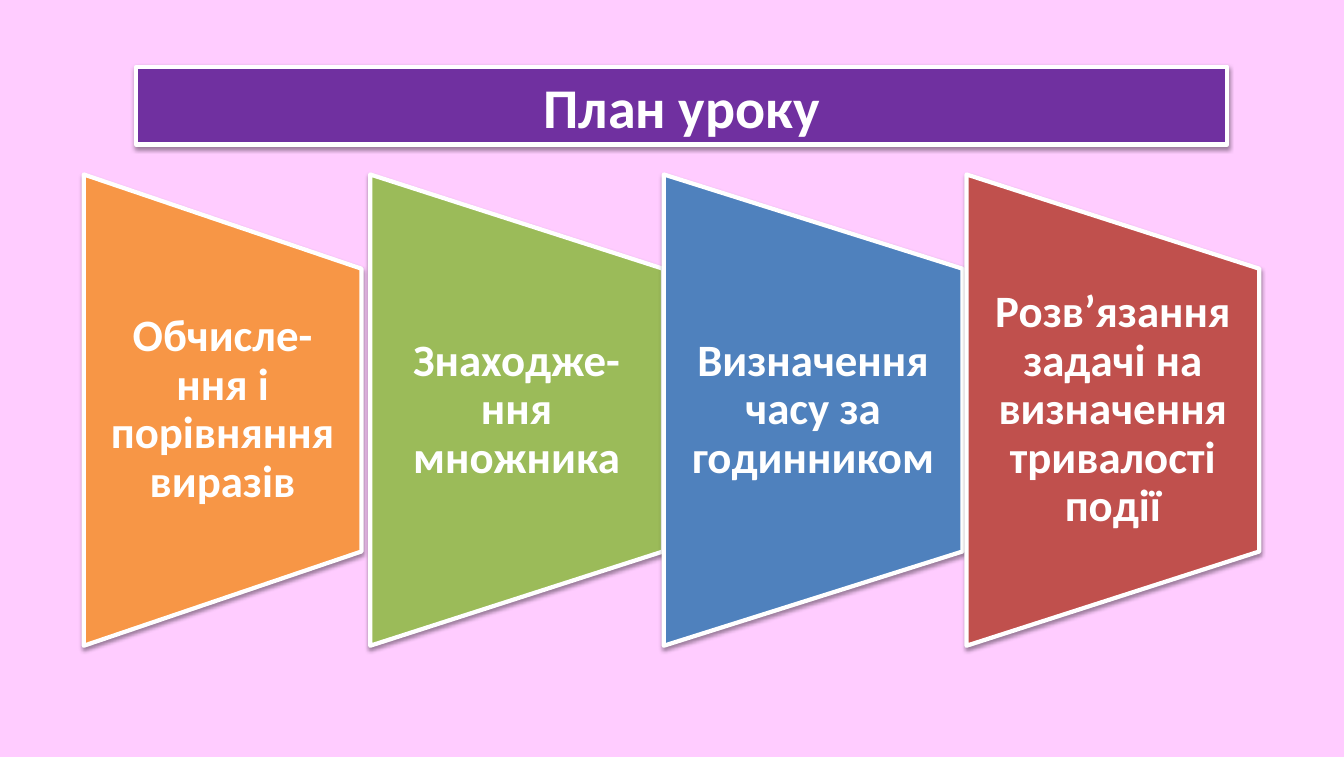
from dataclasses import dataclass

import pptx
import pptx.dml.color
import pptx.enum.shapes
import pptx.enum.text
import pptx.oxml
import pptx.oxml.ns
import pptx.util
from pptx.util import Cm

COLORS = {
    "background": "FFCCFF",
    "title": "7030A0",
    "orange": "F79646",
    "green": "9BBB59",
    "blue": "4F81BD",
    "red": "C0504D",
    "white": "FFFFFF",
}
FONT = "Calibri"
PANEL_CENTER = 10.32
PANEL_HEIGHT = 11.86
LABEL_HEIGHT = 7.11


@dataclass
class Stage:
    text: str
    color: str
    left: float
    width: float


STAGES = [
    Stage("Обчисле-ння і порівняння виразів", "orange", 2.11, 6.99),
    Stage("Знаходже-ння множника", "green", 9.32, 7.37),
    Stage("Визначення часу за годинником", "blue", 16.71, 7.52),
    Stage("Розв’язання задачі на визначення тривалості події", "red", 24.33, 7.37),
]


def rgb(name: str) -> pptx.dml.color.RGBColor:
    return pptx.dml.color.RGBColor.from_string(COLORS[name])


def add_shadow(shape) -> None:
    shape.shadow.inherit = False
    effects = shape._element.spPr.find(pptx.oxml.ns.qn("a:effectLst"))
    effects.append(pptx.oxml.parse_xml(
        f'<a:outerShdw {pptx.oxml.ns.nsdecls("a")} blurRad="39370" dist="20320"'
        ' dir="5400000" rotWithShape="0"><a:srgbClr val="000000">'
        '<a:alpha val="38000"/></a:srgbClr></a:outerShdw>'))


def add_block(slide, kind, color: str, left: float, top: float,
              width: float, height: float, rotation: float = 0):
    shape = slide.shapes.add_shape(kind, Cm(left), Cm(top), Cm(width), Cm(height))
    shape.rotation = rotation
    shape.fill.solid()
    shape.fill.fore_color.rgb = rgb(color)
    shape.line.color.rgb = rgb("white")
    shape.line.width = pptx.util.Pt(3)
    add_shadow(shape)
    return shape


def write_text(shape, text: str, *, size: float, side_inset: float = 0.25,
               end_inset: float = 0.13, line_spacing: float = 1.0) -> None:
    frame = shape.text_frame
    frame.word_wrap = True
    frame.vertical_anchor = pptx.enum.text.MSO_ANCHOR.MIDDLE
    frame.margin_left = frame.margin_right = Cm(side_inset)
    frame.margin_top = frame.margin_bottom = Cm(end_inset)
    paragraph = frame.paragraphs[0]
    paragraph.alignment = pptx.enum.text.PP_ALIGN.CENTER
    paragraph.line_spacing = line_spacing
    run = paragraph.add_run()
    run.text = text
    run.font.name = FONT
    run.font.size = pptx.util.Pt(size)
    run.font.bold = True
    run.font.color.rgb = rgb("white")


def add_stage(slide, stage: Stage) -> None:
    # The panel is turned a quarter, so its width and height swap around its centre
    center = stage.left + stage.width / 2
    add_block(slide, pptx.enum.shapes.MSO_SHAPE.FLOWCHART_MANUAL_OPERATION, stage.color,
              center - PANEL_HEIGHT / 2, PANEL_CENTER - stage.width / 2,
              PANEL_HEIGHT, stage.width, rotation=270)
    label = slide.shapes.add_textbox(
        Cm(stage.left), Cm(PANEL_CENTER - LABEL_HEIGHT / 2),
        Cm(stage.width), Cm(LABEL_HEIGHT))
    write_text(label, stage.text, size=32, side_inset=0.56, end_inset=0,
               line_spacing=0.9)


def main() -> None:
    presentation = pptx.Presentation()
    presentation.slide_width = Cm(33.83)
    presentation.slide_height = Cm(19.05)
    slide = presentation.slides.add_slide(presentation.slide_layouts[6])

    # Background
    slide.background.fill.solid()
    slide.background.fill.fore_color.rgb = rgb("background")

    # Title bar
    title = add_block(slide, pptx.enum.shapes.MSO_SHAPE.RECTANGLE, "title",
                      3.43, 1.68, 27.46, 1.96)
    write_text(title, "План уроку", size=40)

    # Lesson stages
    for stage in STAGES:
        add_stage(slide, stage)

    presentation.save("out.pptx")


if __name__ == "__main__":
    main()
